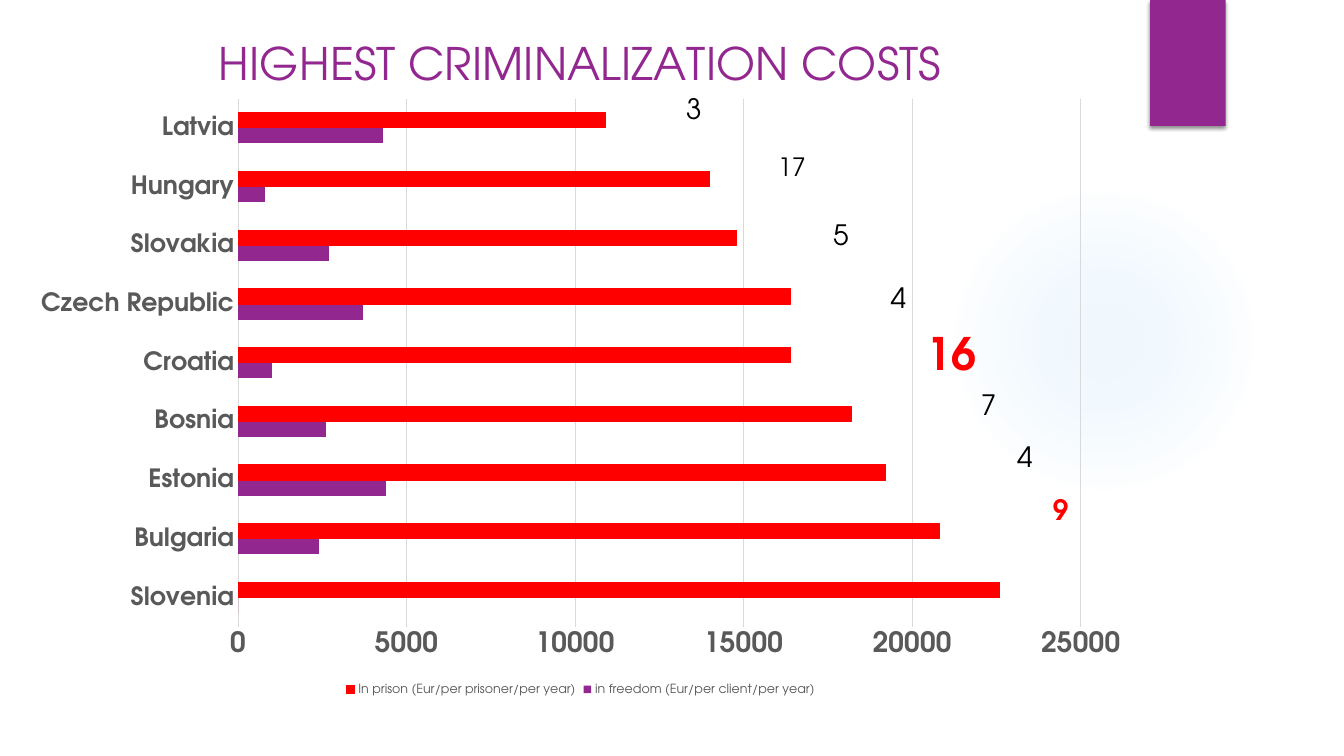
from lxml import etree
from pptx import Presentation
from pptx.chart.data import CategoryChartData
from pptx.dml.color import RGBColor
from pptx.enum.chart import XL_CHART_TYPE as ChartType, XL_LEGEND_POSITION as LegendPosition
from pptx.enum.chart import XL_TICK_MARK as TickMark
from pptx.enum.shapes import MSO_SHAPE as Shape
from pptx.enum.text import MSO_AUTO_SIZE as AutoSize
from pptx.oxml import parse_xml
from pptx.oxml.ns import nsdecls, qn
from pptx.util import Pt

FONT = "TeX Gyre Adventor"
PURPLE, RED, BLACK, GREY, PALE, BLUE = "92278F", "FF0000", "000000", "595959", "D9D9D9", "45A5ED"

TITLE = "HIGHEST CRIMINALIZATION COSTS"
FREEDOM = "in freedom (Eur/per client/per year)"
PRISON = "In prison (Eur/per prisoner/per year)"
COSTS = [  # country, in freedom, in prison
    ("Slovenia", 0, 22600),
    ("Bulgaria", 2400, 20800),
    ("Estonia", 4400, 19200),
    ("Bosnia", 2600, 18200),
    ("Croatia", 1000, 16400),
    ("Czech Republic", 3700, 16400),
    ("Slovakia", 2700, 14800),
    ("Hungary", 800, 14000),
    ("Latvia", 4300, 10900),
]
SMALL = dict(width=26, height=32, size=20)
RATIOS = [  # text, left, top, format
    ("3", 483, 62, SMALL),
    ("17", 548.5, 104.5, dict(width=34.5, height=29, size=18)),
    ("5", 588, 152, SMALL),
    ("4", 629, 197, SMALL),
    ("16", 655, 229, dict(width=50.5, height=46, size=32, color=RED, bold=True)),
    ("7", 693.5, 273.5, SMALL),
    ("4", 719.5, 310.5, SMALL),
    ("9", 745, 348.5, dict(SMALL, color=RED, bold=True)),
]
GLOW_STOPS = [(0, 7), (36, 6), (69, 0)]  # position and opacity, percent
CHART = (13, 10, 803.5, 489.5)
PLOT = (170, 70.5, 602, 377.5)


def rgb(color):
    return RGBColor.from_string(color)


def style(font, size, color, bold=False):
    font.name, font.size, font.bold = FONT, Pt(size), bold
    font.color.rgb = rgb(color)


def add_shape(kind, *place):
    shape = slide.shapes.add_shape(kind, *map(Pt, place))
    shape.shadow.inherit = False
    shape.line.fill.background()
    return shape


def add_text(text, left, top, width, height, size, color=BLACK, bold=False):
    box = slide.shapes.add_textbox(*map(Pt, (left, top, width, height)))
    box.text_frame.word_wrap = False
    box.text_frame.auto_size = AutoSize.SHAPE_TO_FIT_TEXT
    span = box.text_frame.paragraphs[0].add_run()
    span.text = text
    style(span.font, size, color, bold)


def add_glow():
    glow = add_shape(Shape.OVAL, 677.5, 132, 222, 222)
    stops = "".join(
        f'<a:gs pos="{at * 1000}"><a:srgbClr val="{BLUE}">'
        f'<a:alpha val="{opacity * 1000}"/></a:srgbClr></a:gs>'
        for at, opacity in GLOW_STOPS)
    gradient = parse_xml(
        f'<a:gradFill {nsdecls("a")}><a:gsLst>{stops}</a:gsLst><a:path path="circle">'
        '<a:fillToRect l="50000" t="50000" r="50000" b="50000"/></a:path></a:gradFill>')
    glow.element.spPr.find(qn("a:prstGeom")).addnext(gradient)


def add_tab():
    tab = add_shape(Shape.RECTANGLE, 821.5, 0, 54, 90)
    tab.fill.solid()
    tab.fill.fore_color.rgb = rgb(PURPLE)
    tab.element.spPr.find(qn("a:effectLst")).append(parse_xml(
        f'<a:outerShdw {nsdecls("a")} blurRad="{Pt(3)}" dist="{Pt(2)}" dir="5400000">'
        f'<a:srgbClr val="{BLACK}"><a:alpha val="45000"/></a:srgbClr></a:outerShdw>'))


def place_plot(chart):
    """Fix the inner plot area, given in slide points, as shares of the chart."""
    left, top, width, height = CHART
    shares = dict(x=(PLOT[0] - left) / width, y=(PLOT[1] - top) / height,
                  w=PLOT[2] / width, h=PLOT[3] / height)
    area = chart._chartSpace.chart.plotArea
    for old in area.findall(qn("c:layout")):
        area.remove(old)
    layout = etree.Element(qn("c:layout"))
    manual = etree.SubElement(layout, qn("c:manualLayout"))
    settings = dict(layoutTarget="inner", xMode="edge", yMode="edge")
    settings.update({key: f"{share:.4f}" for key, share in shares.items()})
    for key, value in settings.items():
        etree.SubElement(manual, qn(f"c:{key}")).set("val", value)
    area.insert(0, layout)


def add_cost_chart():
    countries, freedom, prison = zip(*COSTS)
    data = CategoryChartData()
    data.categories = countries
    data.add_series(FREEDOM, freedom)
    data.add_series(PRISON, prison)
    chart = slide.shapes.add_chart(ChartType.BAR_CLUSTERED, *map(Pt, CHART), data).chart
    style(chart.font, 10, BLACK)

    chart.has_title = True
    span = chart.chart_title.text_frame.paragraphs[0].add_run()
    span.text = TITLE
    style(span.font, 32, PURPLE)
    chart.chart_title.include_in_layout = False

    chart.has_legend = True
    chart.legend.position = LegendPosition.BOTTOM
    chart.legend.include_in_layout = False
    style(chart.legend.font, 9, GREY)

    plot = chart.plots[0]
    plot.gap_width, plot.overlap, plot.vary_by_categories = 182, 0, False
    for series, color in zip(plot.series, (PURPLE, RED)):
        series.format.fill.solid()
        series.format.fill.fore_color.rgb = rgb(color)
    series.format.line.color.rgb = rgb(RED)
    series.format.line.width = Pt(0.75)

    names, values = chart.category_axis, chart.value_axis
    for axis, size in ((names, 18), (values, 20)):
        axis.major_tick_mark = axis.minor_tick_mark = TickMark.NONE
        style(axis.tick_labels.font, size, GREY, bold=True)
    values.minimum_scale, values.maximum_scale, values.major_unit = 0, 25000, 5000
    values.format.line.fill.background()
    for line in (names.format.line, values.major_gridlines.format.line):
        line.color.rgb = rgb(PALE)
        line.width = Pt(0.75)
    place_plot(chart)


deck = Presentation()
deck.slide_width, deck.slide_height = Pt(960), Pt(540)
slide = deck.slides.add_slide(deck.slide_layouts[6])
add_glow()
add_tab()
add_cost_chart()
for text, left, top, look in RATIOS:
    add_text(text, left, top, **look)
deck.save("out.pptx")
